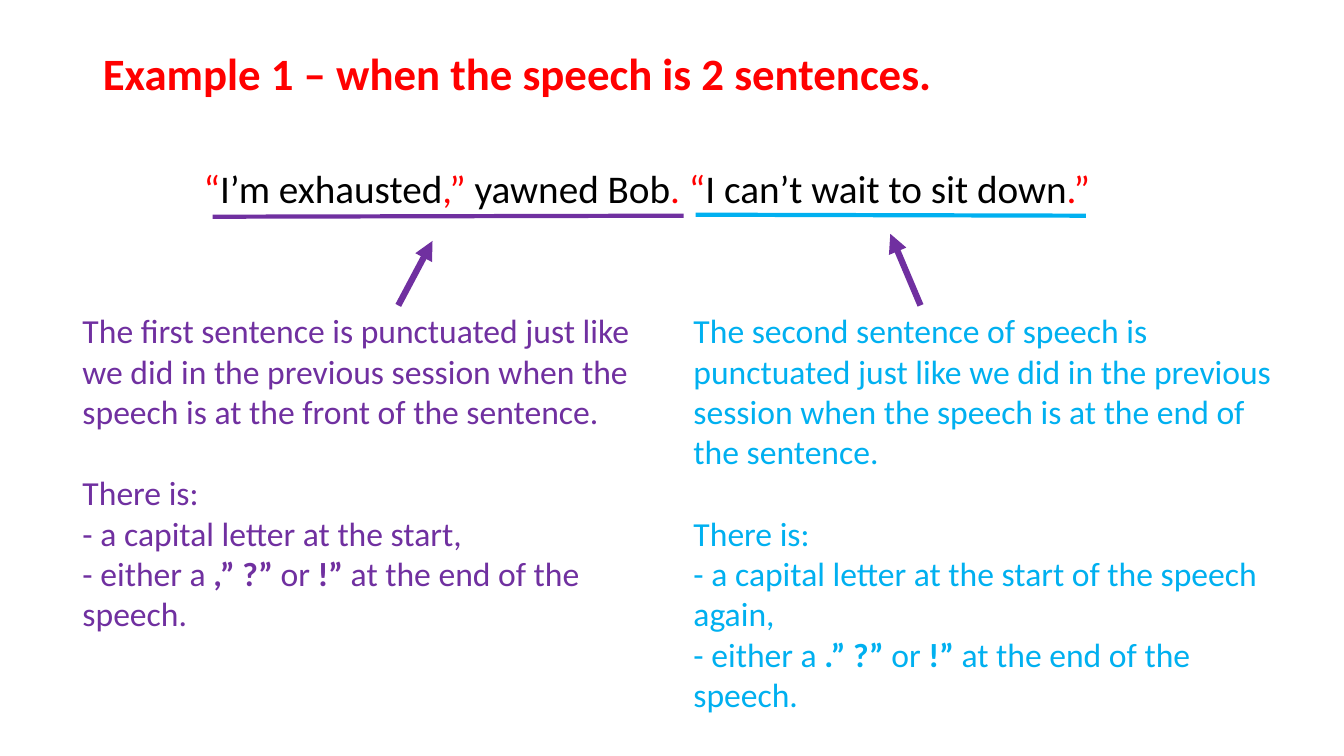
from dataclasses import dataclass

from lxml.etree import SubElement
from pptx import Presentation
from pptx.dml.color import RGBColor as RGB
from pptx.enum.shapes import MSO_CONNECTOR as CONNECTOR
from pptx.enum.text import MSO_ANCHOR as ANCHOR, MSO_AUTO_SIZE as AUTO, PP_ALIGN as ALIGN
from pptx.oxml.ns import qn
from pptx.util import Inches, Pt


@dataclass(frozen=True)
class Theme:
    font: str = "Calibri"
    red: RGB = RGB(0xFF, 0x00, 0x00)
    black: RGB = RGB(0x00, 0x00, 0x00)
    purple: RGB = RGB(0x70, 0x30, 0xA0)
    blue: RGB = RGB(0x00, 0xB0, 0xF0)
    title_size: Pt = Pt(32)
    speech_size: Pt = Pt(28)
    note_size: Pt = Pt(24)
    note_gap: Pt = Pt(29.3)
    underline: Pt = Pt(3)
    arrow: Pt = Pt(4.5)


THEME = Theme()


def add_run(p, text, size, color, bold=False):
    r = p.add_run()
    r.text = text
    r.font.name = THEME.font
    r.font.size = size
    r.font.color.rgb = color
    r.font.bold = bold


def place(sp, left, top, width, height):
    sp.left, sp.top = Inches(left), Inches(top)
    sp.width, sp.height = Inches(width), Inches(height)
    tf = sp.text_frame
    tf.word_wrap = True
    tf.auto_size = AUTO.NONE
    tf.vertical_anchor = ANCHOR.MIDDLE
    p = tf.paragraphs[0]
    p.alignment = ALIGN.LEFT
    p.line_spacing = 0.9
    p.space_before = Pt(0)
    return p


def add_title(s, text):
    p = place(s.shapes.title, 0.92, 0.45, 11.5, 0.6)
    add_run(p, text, THEME.title_size, THEME.red, True)


def add_speech(s, parts):
    p = place(s.placeholders[1], 1.92, 1.6, 10.5, 0.58)
    pPr = p._p.get_or_add_pPr()
    pPr.set("marL", "0")
    pPr.set("indent", "0")
    SubElement(pPr, qn("a:buNone"))
    for text, color in parts:
        add_run(p, text, THEME.speech_size, color)


def add_note(s, left, height, color, intro, start, marks):
    sp = s.shapes.add_textbox(Inches(left), Inches(3.03), Inches(6.06), Inches(height))
    tf = sp.text_frame
    tf.word_wrap = True
    paragraphs = [
        [(intro, False)],
        [("There is:", False)],
        [(start, False)],
        [("- either a ", False), (marks, True), (" or ", False),
         ("!”", True), (" at the end of the speech.", False)],
    ]
    for i, runs in enumerate(paragraphs):
        p = tf.add_paragraph() if i else tf.paragraphs[0]
        if i == 1:
            p.space_before = THEME.note_gap
        for text, bold in runs:
            add_run(p, text, THEME.note_size, color, bold)


def add_line(s, start, end, color, width, arrow=False):
    points = [Inches(v) for v in (*start, *end)]
    line = s.shapes.add_connector(CONNECTOR.STRAIGHT, *points)
    line.line.color.rgb = color
    line.line.width = width
    if arrow:
        SubElement(line.line._get_or_add_ln(), qn("a:tailEnd"), type="triangle")
    SubElement(line._element.spPr, qn("a:effectLst"))


def main():
    prs = Presentation()
    prs.slide_width, prs.slide_height = Inches(13.33), Inches(7.5)
    s = prs.slides.add_slide(prs.slide_layouts[1])
    t = THEME

    add_title(s, "Example 1 – when the speech is 2 sentences.")
    add_speech(s, [
        ("“", t.red), ("I’m exhausted", t.black), (",” ", t.red),
        ("yawned Bob", t.black), (". “", t.red),
        ("I can’t wait to sit down", t.black), (".”", t.red),
    ])
    add_note(
        s, 0.72, 3.33, t.purple,
        "The first sentence is punctuated just like we did in the previous session "
        "when the speech is at the front of the sentence.",
        "- a capital letter at the start,", ",” ?”",
    )
    add_line(s, (2.11, 2.15), (6.78, 2.14), t.purple, t.underline)
    add_line(s, (6.9, 2.13), (10.77, 2.14), t.blue, t.underline)
    add_line(s, (3.95, 3.03), (4.29, 2.39), t.purple, t.arrow, True)
    add_line(s, (9.13, 3.03), (8.83, 2.32), t.purple, t.arrow, True)
    add_note(
        s, 6.78, 4.14, t.blue,
        "The second sentence of speech is punctuated just like we did in the previous "
        "session when the speech is at the end of the sentence.",
        "- a capital letter at the start of the speech again,", ".” ?”",
    )
    prs.save("out.pptx")


if __name__ == "__main__":
    main()
